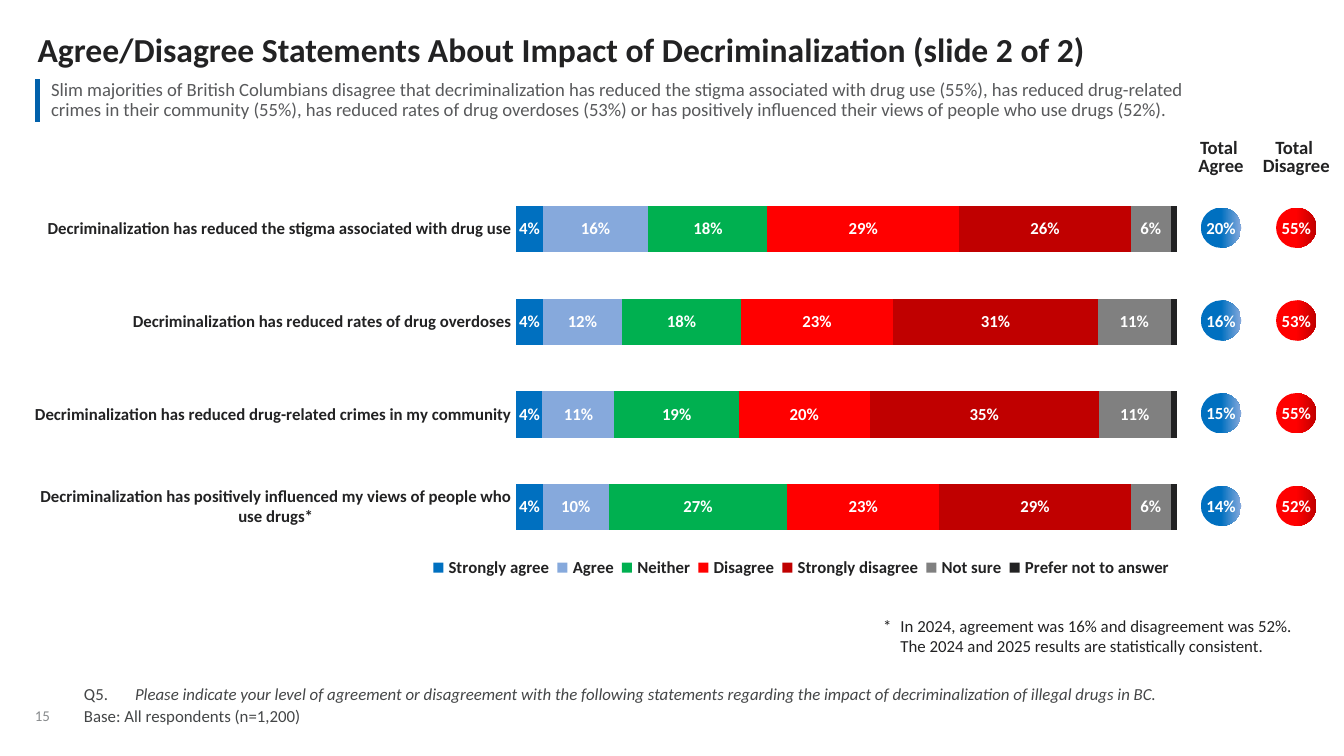
from lxml import etree
from pptx import Presentation
from pptx.chart.data import CategoryChartData
from pptx.dml.color import RGBColor
from pptx.enum.chart import XL_CHART_TYPE, XL_LEGEND_POSITION, XL_TICK_LABEL_POSITION, XL_TICK_MARK
from pptx.enum.shapes import MSO_SHAPE
from pptx.enum.text import MSO_ANCHOR, MSO_AUTO_SIZE, PP_ALIGN
from pptx.oxml import parse_xml
from pptx.oxml.ns import nsdecls, qn
from pptx.util import Inches, Pt

STACKED_BAR = XL_CHART_TYPE.BAR_STACKED_100
LEGEND_BOTTOM = XL_LEGEND_POSITION.BOTTOM
NO_LABELS = XL_TICK_LABEL_POSITION.NONE
NO_TICK = XL_TICK_MARK.NONE
OVAL = MSO_SHAPE.OVAL
TOP, MIDDLE, BOTTOM = MSO_ANCHOR.TOP, MSO_ANCHOR.MIDDLE, MSO_ANCHOR.BOTTOM
NO_AUTOFIT = MSO_AUTO_SIZE.NONE
LEFT, CENTER = PP_ALIGN.LEFT, PP_ALIGN.CENTER

SLIDE_WIDTH = Inches(10)
SLIDE_HEIGHT = SLIDE_WIDTH * 9 // 16
GRID_UNIT = SLIDE_WIDTH / 100
FONT = "Calibri"

INK = RGBColor(0x22, 0x22, 0x23)
SUBTITLE_GRAY = RGBColor(0x58, 0x59, 0x5B)
NOTE_GRAY = RGBColor(0x44, 0x46, 0x47)
PAGE_GRAY = RGBColor(0x88, 0x8B, 0x8D)
ACCENT_BLUE = RGBColor(0x01, 0x61, 0xAB)
WHITE = RGBColor(0xFF, 0xFF, 0xFF)
BLUE = RGBColor(0x00, 0x70, 0xC0)
LIGHT_BLUE = RGBColor(0x86, 0xA9, 0xDC)
GREEN = RGBColor(0x00, 0xB0, 0x50)
RED = RGBColor(0xFF, 0x00, 0x00)
DARK_RED = RGBColor(0xC0, 0x00, 0x00)
GRAY = RGBColor(0x80, 0x80, 0x80)

STATEMENTS = [
    "Decriminalization has reduced the stigma associated with drug use",
    "Decriminalization has reduced rates of drug overdoses",
    "Decriminalization has reduced drug-related crimes in my community",
    "Decriminalization has positively influenced my views of people who use drugs*",
]
RESPONSES = [
    ("Strongly agree", BLUE, (0.04, 0.04, 0.04, 0.04)),
    ("Agree", LIGHT_BLUE, (0.16, 0.12, 0.11, 0.10)),
    ("Neither", GREEN, (0.18, 0.18, 0.19, 0.27)),
    ("Disagree", RED, (0.29, 0.23, 0.20, 0.23)),
    ("Strongly disagree", DARK_RED, (0.26, 0.31, 0.35, 0.29)),
    ("Not sure", GRAY, (0.06, 0.11, 0.11, 0.06)),
    ("Prefer not to answer", INK, (0.01, 0.01, 0.01, 0.01)),
]
TOTALS = [
    ("Agree", (BLUE, LIGHT_BLUE), ("20%", "16%", "15%", "14%")),
    ("Disagree", (RED, DARK_RED), ("55%", "53%", "55%", "52%")),
]


def grid(*units):
    """Turn grid units into slide lengths."""
    return [round(unit * GRID_UNIT) for unit in units]


def style(paragraph, size, color, bold=False, align=LEFT, spacing=1.0):
    """Format a whole paragraph."""
    paragraph.alignment = align
    paragraph.line_spacing = spacing
    font = paragraph.font
    font.name, font.size, font.bold = FONT, Pt(size), bold
    font.color.rgb = color


def hang(paragraph, indent):
    """Give a paragraph a hanging indent in grid units."""
    properties = paragraph._p.get_or_add_pPr()
    width = grid(indent)[0]
    properties.set("marL", str(width))
    properties.set("indent", str(-width))


def prepare_frame(shape, anchor=TOP, wrap=True):
    """Clear a shape's text margins and set its anchor."""
    frame = shape.text_frame
    frame.margin_left = frame.margin_right = frame.margin_top = frame.margin_bottom = 0
    frame.vertical_anchor, frame.word_wrap = anchor, wrap
    frame.auto_size = NO_AUTOFIT
    return frame


def place_title(slide, box):
    """Set the slide title."""
    title = slide.shapes.title
    title.left, title.top, title.width, title.height = grid(*box)
    frame = prepare_frame(title)
    frame.text = "Agree/Disagree Statements About Impact of Decriminalization (slide 2 of 2)"
    style(frame.paragraphs[0], 18, INK, bold=True, spacing=0.9)


def place_summary(slide, box):
    """Add the one-cell summary with its accent rule."""
    table = slide.shapes.add_table(1, 1, *grid(*box)).table
    table.first_row = table.horz_banding = False
    cell = table.cell(0, 0)
    cell.fill.background()
    cell.margin_left = cell.margin_right = grid(1)[0]
    cell.margin_top = cell.margin_bottom = 0
    cell.vertical_anchor = MIDDLE
    cell.text = (
        "Slim majorities of British Columbians disagree that decriminalization has reduced the stigma "
        "associated with drug use (55%), has reduced drug-related crimes in their community (55%), has "
        "reduced rates of drug overdoses (53%) or has positively influenced their views of people who "
        "use drugs (52%)."
    )
    style(cell.text_frame.paragraphs[0], 10, SUBTITLE_GRAY, spacing=0.9)
    borders = [("lnL", ACCENT_BLUE, 3), ("lnR", WHITE, 1)]
    for position, (side, color, width) in enumerate(borders):
        cell._tc.get_or_add_tcPr().insert(position, parse_xml(
            f'<a:{side} {nsdecls("a")} w="{Pt(width)}"><a:solidFill>'
            f'<a:srgbClr val="{color}"/></a:solidFill></a:{side}>'))


def set_layout(element, position, shares, inner=False):
    """Fix a chart part at shares of the chart's size."""
    for old in element.findall(qn("c:layout")):
        element.remove(old)
    layout = parse_xml(f'<c:layout {nsdecls("c")}><c:manualLayout/></c:layout>')
    settings = [("layoutTarget", "inner")] if inner else []
    settings += [("xMode", "edge"), ("yMode", "edge"), *zip("xywh", shares)]
    for tag, value in settings:
        etree.SubElement(layout[0], qn(f"c:{tag}")).set("val", str(value))
    element.insert(position, layout)


def place_responses(slide, box):
    """Add the stacked bars of responses to each statement."""
    data = CategoryChartData(number_format="0%")
    data.categories = STATEMENTS
    for name, _, values in RESPONSES:
        data.add_series(name, values)
    chart = slide.shapes.add_chart(STACKED_BAR, *grid(*box), data).chart
    chart.has_title = False
    chart.font.name, chart.font.size, chart.font.bold = FONT, Pt(9), True
    chart.font.color.rgb = INK
    for axis in (chart.category_axis, chart.value_axis):
        axis.major_tick_mark = axis.minor_tick_mark = NO_TICK
        axis.has_major_gridlines = False
        axis.format.line.fill.background()
    chart.category_axis.reverse_order = True
    chart.value_axis.tick_label_position = NO_LABELS
    chart.value_axis.minimum_scale, chart.value_axis.maximum_scale = 0, 1
    chart.value_axis.major_unit = 0.2
    plot = chart.plots[0]
    plot.gap_width = plot.overlap = 100
    plot.vary_by_categories = False
    for series, (_, color, _) in zip(plot.series, RESPONSES):
        series.format.fill.solid()
        series.format.fill.fore_color.rgb = color
    for series in list(plot.series)[:-1]:
        labels = series.data_labels
        labels.show_value = True
        labels.number_format, labels.number_format_is_linked = "0%", False
        labels.font.name, labels.font.size, labels.font.bold = FONT, Pt(9), True
        labels.font.color.rgb = WHITE
    chart.has_legend = True
    chart.legend.position, chart.legend.include_in_layout = LEGEND_BOTTOM, False
    set_layout(chart.legend._element, 1, (0.34, 0.92, 0.66, 0.07))
    set_layout(plot._element.getparent(), 0, (0.42, 0, 0.58, 0.92), inner=True)


def place_totals(slide, box):
    """Add a headed column of circles for each total."""
    left, top, width, height = box
    header, circle = 3.1, 3
    column_width = width / len(TOTALS)
    row_height = (height - header) / len(STATEMENTS)
    for column, (name, gradient, shares) in enumerate(TOTALS):
        x = left + column * column_width
        heading = slide.shapes.add_textbox(*grid(x, top, column_width, header))
        frame = prepare_frame(heading, wrap=False)
        frame.text = f"Total \n{name}"
        for paragraph in frame.paragraphs:
            style(paragraph, 10, INK, bold=True, align=CENTER, spacing=0.8)
        for row, share in enumerate(shares):
            y = top + header + row * row_height + (row_height - circle) / 2
            total = slide.shapes.add_shape(
                OVAL, *grid(x + (column_width - circle) / 2, y, circle, circle))
            total.shadow.inherit = False
            total.line.fill.background()
            total.fill.gradient()
            total.fill.gradient_angle = 0
            for stop, color, position in zip(total.fill.gradient_stops, gradient, (0.5, 1)):
                stop.color.rgb, stop.position = color, position
            frame = prepare_frame(total, MIDDLE, wrap=False)
            frame.text = share
            style(frame.paragraphs[0], 9, WHITE, bold=True, align=CENTER)


def place_footnote(slide, box):
    """Add the note on the earlier results."""
    frame = prepare_frame(slide.shapes.add_textbox(*grid(*box)))
    frame.text = ("* \tIn 2024, agreement was 16% and disagreement was 52%. "
                  "The 2024 and 2025 results are statistically consistent.")
    hang(frame.paragraphs[0], 1.3)
    style(frame.paragraphs[0], 9, INK)


def place_question(slide, box):
    """Add the survey question and its base."""
    frame = prepare_frame(slide.shapes.add_textbox(*grid(*box)), BOTTOM)
    frame.text = "Q5.\t\nBase: All respondents (n=1,200)"
    question = frame.paragraphs[0].add_run()
    question.text = ("Please indicate your level of agreement or disagreement with the following "
                     "statements regarding the impact of decriminalization of illegal drugs in BC.")
    question.font.italic = True
    for paragraph in frame.paragraphs:
        hang(paragraph, 3.8)
        style(paragraph, 9, NOTE_GRAY, spacing=0.9)
        paragraph.space_after = Pt(2)


def place_page_number(slide, box):
    """Add the page number."""
    frame = prepare_frame(slide.shapes.add_textbox(*grid(*box)), BOTTOM, wrap=False)
    frame.text = "15"
    style(frame.paragraphs[0], 8, PAGE_GRAY, spacing=0.85)


def main():
    """Build and save the slide."""
    deck = Presentation()
    deck.slide_width, deck.slide_height = SLIDE_WIDTH, SLIDE_HEIGHT
    slide = deck.slides.add_slide(deck.slide_layouts[5])
    place_page_number(slide, (2.6, 51.3, 3.4, 2.6))
    place_title(slide, (2.8, 2.5, 94.6, 2.7))
    place_question(slide, (6.25, 50.95, 84, 3.1))
    place_summary(slide, (2.8, 5.95, 90, 2.95))
    place_responses(slide, (2.6, 13.6, 85, 30))
    place_totals(slide, (88.05, 10.4, 11.2, 30.7))
    place_footnote(slide, (65.7, 45.8, 31.5, 3))
    deck.save("out.pptx")


if __name__ == "__main__":
    main()
